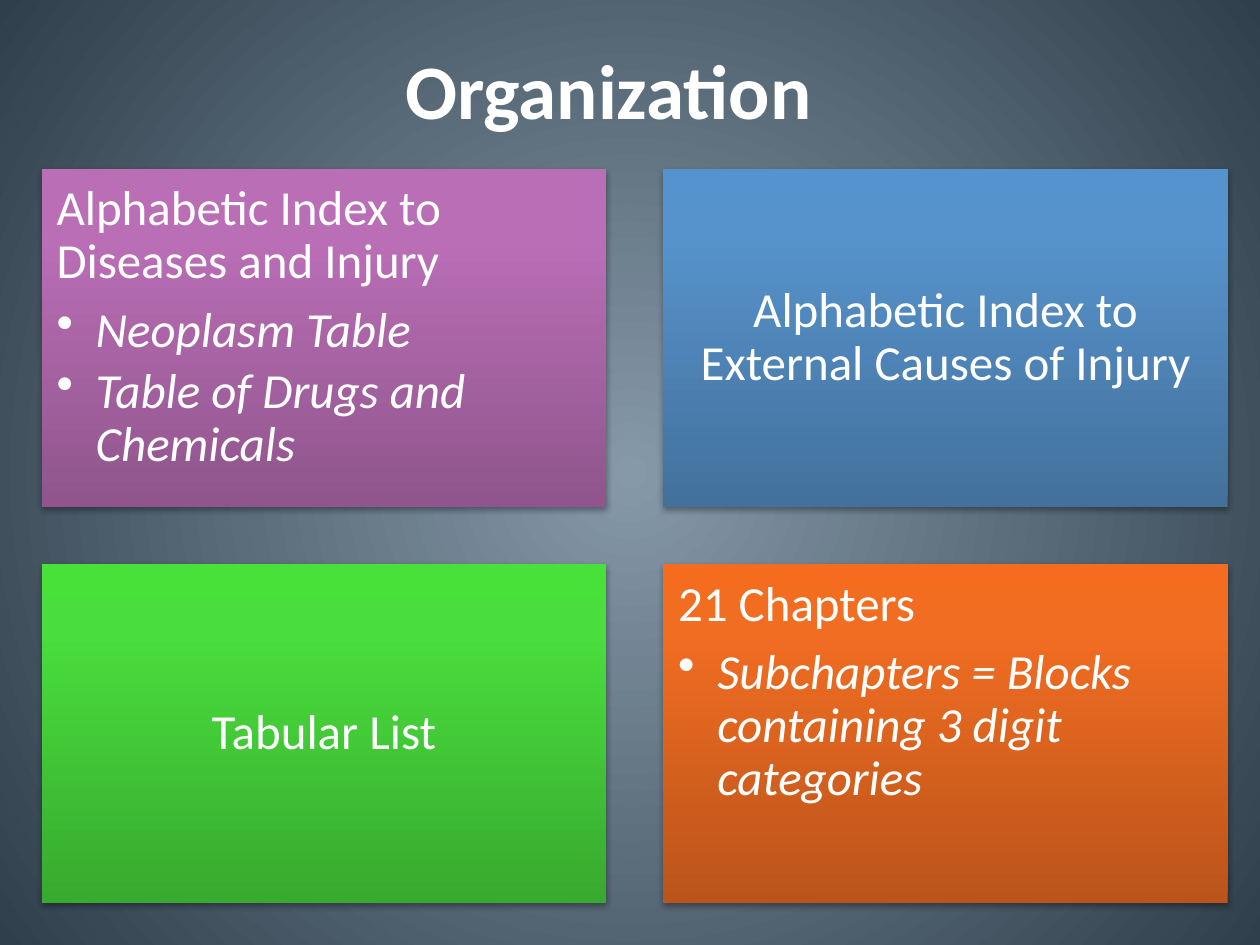
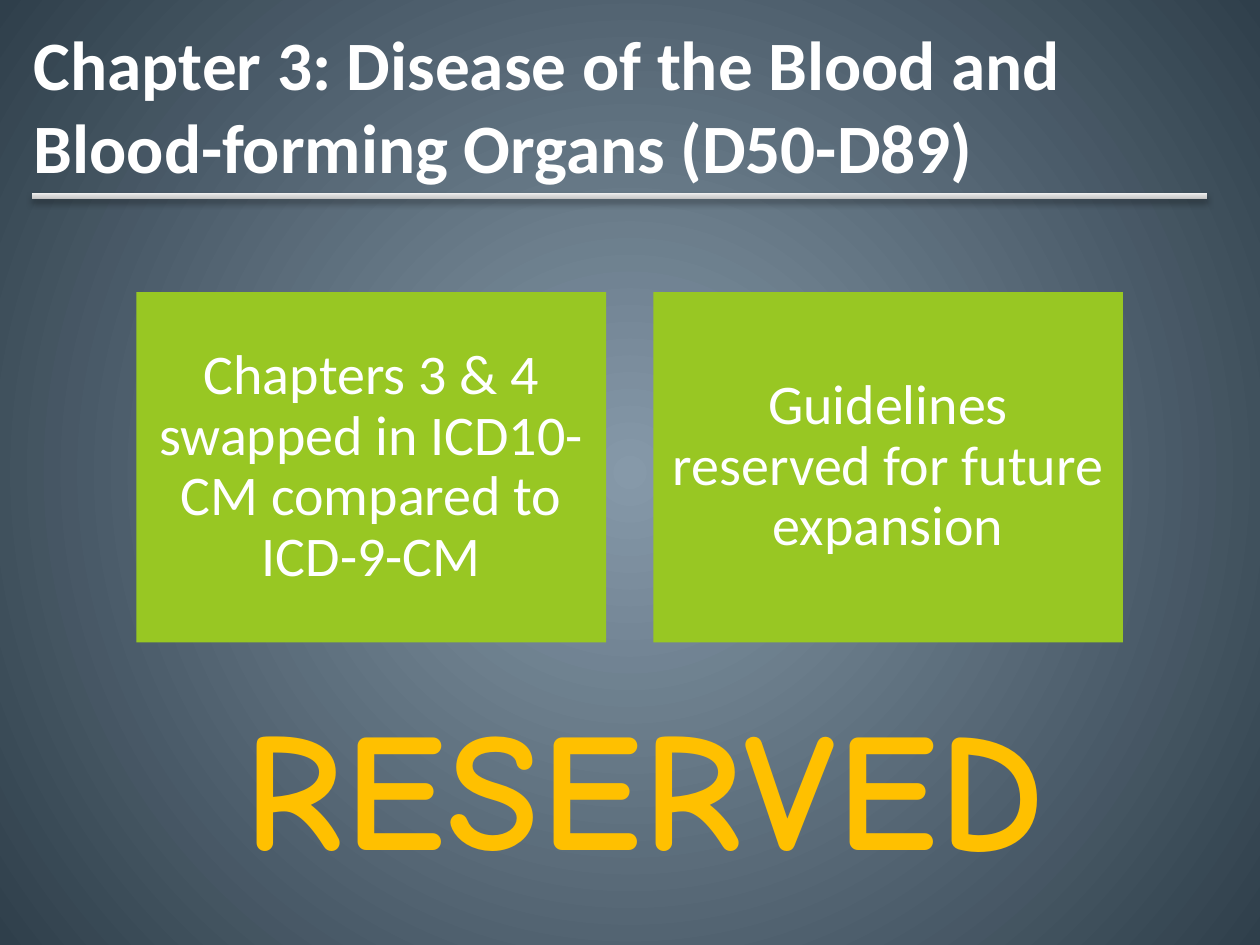
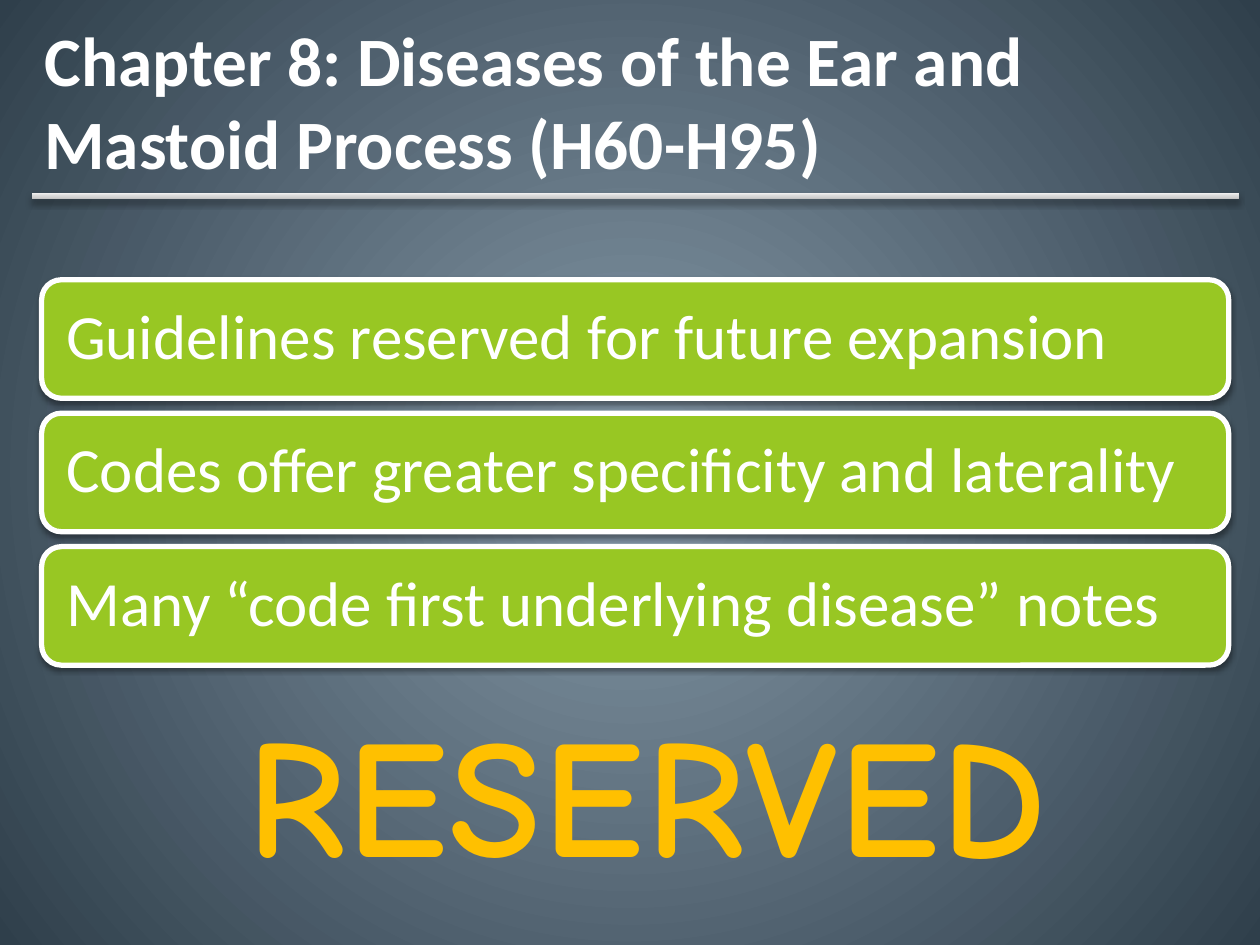
from pptx import Presentation
from pptx import util as u
from pptx.dml.color import RGBColor
from pptx.enum import shapes, text
from pptx.oxml import parse_xml
from pptx.oxml.ns import nsdecls, qn
from pptx.oxml.xmlchemy import OxmlElement

WHITE = RGBColor(0xFF, 0xFF, 0xFF)
BLACK = RGBColor(0x00, 0x00, 0x00)
GREEN = RGBColor(0x98, 0xC7, 0x23)
GOLD = RGBColor(0xFF, 0xC0, 0x00)
BACKDROP = [(0, RGBColor(0x86, 0x99, 0xA9)), (100, RGBColor(0x2F, 0x3F, 0x4B))]
SILVER = [(0, RGBColor(0xBD, 0xBD, 0xBD)), (35, RGBColor(0xD1, 0xD1, 0xD1)),
          (100, RGBColor(0xEE, 0xEE, 0xEE))]
PURPLE = [(0, RGBColor(0x8F, 0x55, 0x8C)), (80, RGBColor(0xBA, 0x6E, 0xB6)),
          (100, RGBColor(0xBC, 0x6E, 0xB8))]
BLUE = [(0, RGBColor(0x43, 0x71, 0x9C)), (80, RGBColor(0x56, 0x92, 0xCB)),
        (100, RGBColor(0x55, 0x93, 0xCE))]
LIME = [(0, RGBColor(0x38, 0xAA, 0x2F)), (80, RGBColor(0x49, 0xDD, 0x3D)),
        (100, RGBColor(0x47, 0xE1, 0x3A))]
ORANGE = [(0, RGBColor(0xBA, 0x54, 0x1A)), (80, RGBColor(0xF1, 0x6D, 0x22)),
          (100, RGBColor(0xF6, 0x6C, 0x1E))]

BODY_FONT = "Calibri"
STAMP_FONT = "Comic Neue"
TITLE_ONLY = 5
UPWARD = '<a:lin ang="16200000" scaled="0"/>'
FROM_CENTRE = ('<a:path path="circle">'
               '<a:fillToRect l="50000" t="50000" r="50000" b="50000"/></a:path>')
LEFT, CENTER = text.PP_ALIGN.LEFT, text.PP_ALIGN.CENTER
TOP, MIDDLE = text.MSO_ANCHOR.TOP, text.MSO_ANCHOR.MIDDLE


def set_gradient(fill, properties, stops, direction=UPWARD):
    """Swap the solid fill inside a properties element for a gradient."""
    fill.solid()
    stop_xml = "".join(f'<a:gs pos="{position * 1000}"><a:srgbClr val="{color}"/></a:gs>'
                       for position, color in stops)
    gradient = parse_xml(f'<a:gradFill {nsdecls("a")} rotWithShape="1">'
                         f'<a:gsLst>{stop_xml}</a:gsLst>{direction}</a:gradFill>')
    properties.replace(properties.find(qn("a:solidFill")), gradient)


def add_shadow(shape, opacity, blur, distance):
    shadow = parse_xml(
        f'<a:outerShdw {nsdecls("a")} blurRad="{u.Pt(blur)}" dist="{u.Pt(distance)}" '
        f'dir="5400000" rotWithShape="0"><a:srgbClr val="{BLACK}">'
        f'<a:alpha val="{opacity * 1000}"/></a:srgbClr></a:outerShdw>')
    shape._element.spPr.find(qn("a:effectLst")).append(shadow)


def add_bullet(paragraph, indent):
    properties = paragraph._p.get_or_add_pPr()
    properties.set("marL", str(indent))
    properties.set("indent", str(-indent))
    bullet = OxmlElement("a:buChar")
    bullet.set("char", "•")
    properties.append(bullet)


def write(paragraph, content, size, font=BODY_FONT, color=WHITE, bold=False,
          italic=False, align=LEFT, line_spacing=None, space_after=0, tracking=None):
    paragraph.text = content
    paragraph.alignment = align
    paragraph.space_after = u.Pt(space_after)
    if line_spacing:
        paragraph.line_spacing = line_spacing
    for run in paragraph.runs:
        run.font.name = font
        run.font.size = u.Pt(size)
        run.font.bold = bold
        run.font.italic = italic
        run.font.color.rgb = color
        if tracking:
            run._r.get_or_add_rPr().set("spc", str(tracking))


def add_block(slide, kind, left, top, width, height, fill, shadow=None, outline=None):
    """Add a shape; fill is one colour or a list of gradient stops."""
    shape = slide.shapes.add_shape(kind, u.Cm(left), u.Cm(top), u.Cm(width), u.Cm(height))
    shape.shadow.inherit = False
    if isinstance(fill, list):
        set_gradient(shape.fill, shape._element.spPr, fill)
    else:
        shape.fill.solid()
        shape.fill.fore_color.rgb = fill
    if outline:
        shape.line.color.rgb = WHITE
        shape.line.width = u.Pt(outline)
    else:
        shape.line.fill.background()
    if shadow:
        add_shadow(shape, *shadow)
    return shape


def fill_block(shape, heading, size, inset, align=CENTER, anchor=MIDDLE, bullets=()):
    frame = shape.text_frame
    frame.word_wrap = True
    frame.vertical_anchor = anchor
    frame.margin_left = frame.margin_right = u.Cm(inset)
    frame.margin_top = frame.margin_bottom = u.Cm(inset)
    write(frame.paragraphs[0], heading, size, align=align, line_spacing=0.9,
          space_after=9 if bullets else 0)
    for bullet in bullets:
        paragraph = frame.add_paragraph()
        paragraph.level = 1
        write(paragraph, bullet, size, italic=True, line_spacing=0.9, space_after=4.5)
        add_bullet(paragraph, u.Cm(0.79))


def add_titled_slide(presentation, title, left, top, size=39.6, align=LEFT):
    slide = presentation.slides.add_slide(presentation.slide_layouts[TITLE_ONLY])
    shape = slide.shapes.title
    shape.left, shape.top = u.Cm(left), u.Cm(top)
    shape.width, shape.height = u.Cm(22.86), u.Cm(3.18)
    shape.text_frame.auto_size = text.MSO_AUTO_SIZE.NONE
    shape.text_frame.vertical_anchor = MIDDLE
    write(shape.text_frame.paragraphs[0], title, size, bold=True, align=align)
    return slide


def add_title_rule(slide, width):
    add_block(slide, shapes.MSO_SHAPE.RECTANGLE, 0.64, 3.89, width, 0.13, SILVER,
              shadow=(32, 3.5, 2.2))


def add_reserved_stamp(slide, left, top):
    box = slide.shapes.add_textbox(u.Cm(left), u.Cm(top), u.Cm(18.87), u.Cm(4.37))
    box.text_frame.word_wrap = False
    box.text_frame.auto_size = text.MSO_AUTO_SIZE.SHAPE_TO_FIT_TEXT
    write(box.text_frame.paragraphs[0], "RESERVED", 96, font=STAMP_FONT, color=GOLD,
          bold=True, align=CENTER, tracking=150)


def build_organization(presentation):
    slide = add_titled_slide(presentation, "Organization", 0.84, 0.2, size=44, align=CENTER)
    panels = [
        (PURPLE, "Alphabetic Index to Diseases and Injury",
         ["Neoplasm Table", "Table of Drugs and Chemicals"]),
        (BLUE, "Alphabetic Index to External Causes of Injury", []),
        (LIME, "Tabular List", []),
        (ORANGE, "21 Chapters", ["Subchapters = Blocks containing 3 digit categories"]),
    ]
    for index, (stops, heading, bullets) in enumerate(panels):
        row, column = divmod(index, 2)
        panel = add_block(slide, shapes.MSO_SHAPE.RECTANGLE, 0.84 + column * 12.53,
                          3.4 + row * 7.97, 11.38, 6.83, stops, shadow=(35, 3.1, 1.8))
        fill_block(panel, heading, 28, 0.3, align=LEFT if bullets else CENTER,
                   anchor=TOP if bullets else MIDDLE, bullets=bullets)


def build_blood_chapter(presentation):
    slide = add_titled_slide(
        presentation, "Chapter 3: Disease of the Blood and\vBlood-forming Organs (D50-D89)",
        0.43, 0.51)
    add_title_rule(slide, 23.7)
    notes = ["Chapters 3 & 4 swapped in ICD10-CM compared to ICD-9-CM",
             "Guidelines reserved for future expansion"]
    for column, note in enumerate(notes):
        card = add_block(slide, shapes.MSO_SHAPE.RECTANGLE, 2.75 + column * 10.42, 5.89,
                         9.47, 7.06, GREEN)
        fill_block(card, note, 32, 0.33)
    add_reserved_stamp(slide, 3.56, 13.64)


def build_ear_chapter(presentation):
    slide = add_titled_slide(
        presentation, "Chapter 8: Diseases of the Ear and\vMastoid Process (H60-H95)",
        0.64, 0.43)
    add_title_rule(slide, 24.33)
    notes = ["Guidelines reserved for future expansion",
             "Codes offer greater specificity and laterality",
             "Many “code first underlying disease” notes"]
    for row, note in enumerate(notes):
        bar = add_block(slide, shapes.MSO_SHAPE.ROUNDED_RECTANGLE, 0.84, 5.64 + row * 2.69,
                        23.93, 2.39, GREEN, shadow=(38, 3.1, 1.6), outline=3)
        fill_block(bar, note, 36, 0.38, align=LEFT)
    add_reserved_stamp(slide, 3.61, 13.77)


def main():
    presentation = Presentation()
    presentation.slide_width, presentation.slide_height = u.Cm(25.4), u.Cm(19.05)
    master = presentation.slide_master
    backdrop = master.background.fill
    set_gradient(backdrop, master._element.find(".//" + qn("p:bgPr")), BACKDROP, FROM_CENTRE)
    build_organization(presentation)
    build_blood_chapter(presentation)
    build_ear_chapter(presentation)
    presentation.save("out.pptx")


if __name__ == "__main__":
    main()
